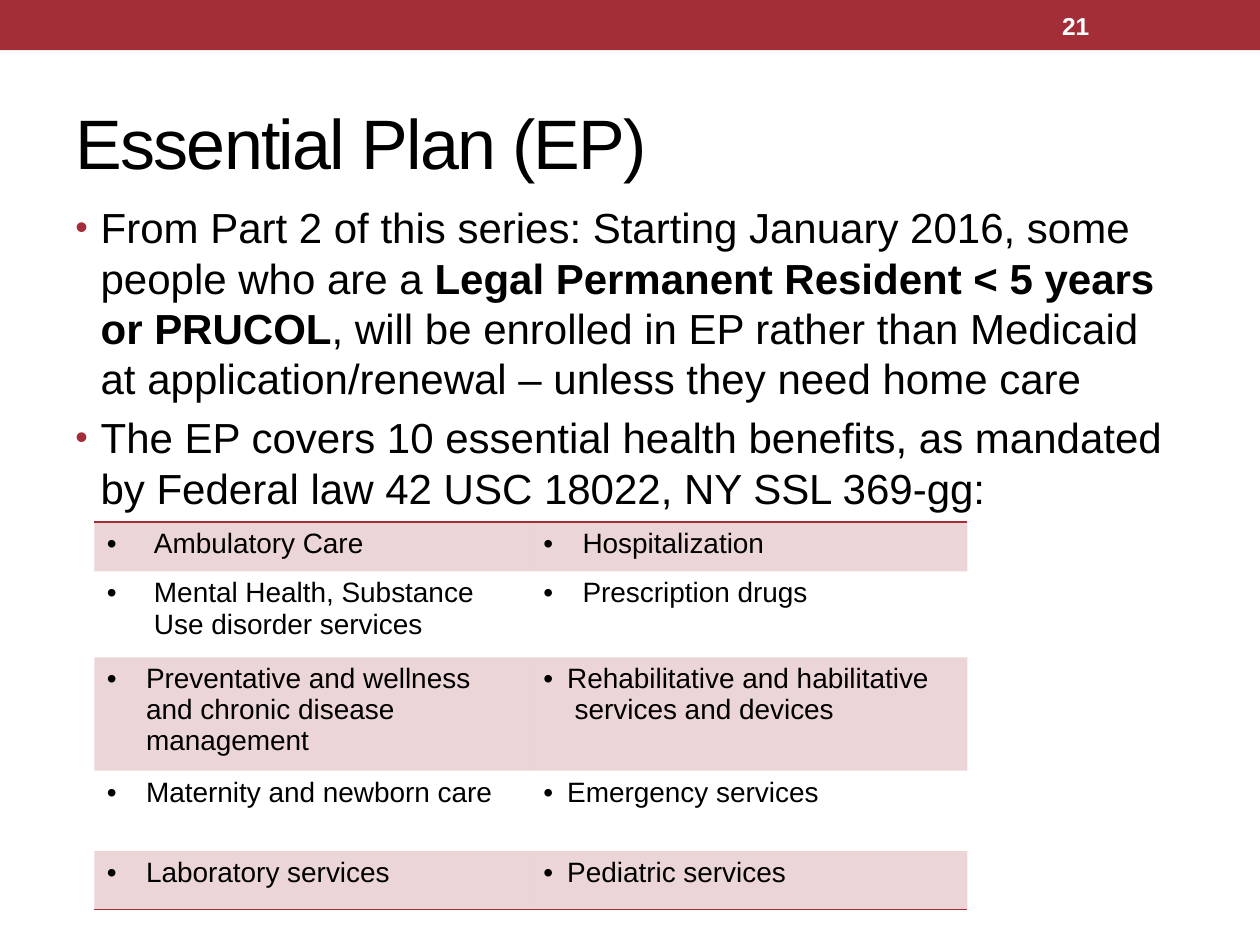
"""Build the Essential Plan slide: banner, title, bullets and benefits table."""
from lxml import etree
from pptx import Presentation
from pptx.dml.color import RGBColor
from pptx.enum import shapes, text
from pptx.oxml.ns import qn
from pptx.util import Cm, Pt

RED = RGBColor(0xA3, 0x2E, 0x37)
BLACK = RGBColor(0, 0, 0)
WHITE = RGBColor(0xFF, 0xFF, 0xFF)
NO_GRID_STYLE = "{2D5ABB26-0587-4C30-8999-92F81FD0307C}"


def add_run(p, words, size, color=BLACK, bold=False):
    r = p.add_run()
    r.text = words
    for name, value in {"name": "Arial", "size": Pt(size), "bold": bold}.items():
        setattr(r.font, name, value)
    r.font.color.rgb = color
    return r


def add_bullet(p, indent, color=None):
    pPr = p._p.get_or_add_pPr()
    pPr.set("marL", str(Cm(indent)))
    pPr.set("indent", str(-Cm(indent)))
    if color is not None:
        clr = etree.SubElement(pPr, qn("a:buClr"))
        etree.SubElement(clr, qn("a:srgbClr"), val=str(color))
        etree.SubElement(pPr, qn("a:buSzPct"), val="85000")
    etree.SubElement(pPr, qn("a:buFont"), typeface="Arial")
    etree.SubElement(pPr, qn("a:buChar"), char="•")


prs = Presentation()
prs.slide_width, prs.slide_height = Cm(25.4), Cm(19.05)
s = prs.slides.add_slide(prs.slide_layouts[5])

banner = s.shapes.add_shape(shapes.MSO_SHAPE.RECTANGLE, 0, 0, Cm(25.4), Cm(1.01))
banner.shadow.inherit = False
banner.fill.solid()
banner.fill.fore_color.rgb = RED
banner.line.fill.background()

title = s.shapes.title
for name, value in {"left": 1.27, "top": 1.49, "width": 22.86, "height": 2.74}.items():
    setattr(title, name, Cm(value))
tf = title.text_frame
tf.vertical_anchor = text.MSO_ANCHOR.MIDDLE
p = tf.paragraphs[0]
p.alignment = text.PP_ALIGN.LEFT
r = add_run(p, "Essential Plan (EP)", 40)
r.font._element.set("spc", "-100")

body = [
    [("From Part 2 of this series: Starting January 2016, some people who are a ", False),
     ("Legal Permanent Resident < 5 years or PRUCOL", True),
     (", will be enrolled in EP rather than Medicaid at application/renewal – "
      "unless they need home care", False)],
    [("The EP covers 10 essential health benefits, as mandated by Federal law "
      "42 USC 18022, NY SSL 369-gg:", False)],
]
tf = s.shapes.add_textbox(Cm(1.27), Cm(3.94), Cm(22.86), Cm(14.07)).text_frame
tf.word_wrap = True
for i, runs in enumerate(body):
    p = tf.add_paragraph() if i else tf.paragraphs[0]
    if i:
        p.space_before = Pt(4.8)
    add_bullet(p, 0.51, RED)
    for words, bold in runs:
        add_run(p, words, 24, bold=bold)

benefits = [
    (1.0, ("Ambulatory Care", 0.95), ("Hospitalization", 0.79)),
    (1.73, ("Mental Health, Substance Use disorder services", 0.95),
     ("Prescription drugs", 0.79)),
    (2.27, ("Preventative and wellness and chronic disease management", 0.79),
     ("Rehabilitative and habilitative", 0.48)),
    (1.62, ("Maternity and newborn care", 0.79), ("Emergency services", 0.48)),
    (1.18, ("Laboratory services", 0.79), ("Pediatric services", 0.48)),
]
table = s.shapes.add_table(5, 2, Cm(1.9), Cm(10.52), Cm(17.6), Cm(7.8)).table
table.first_row = table.horz_banding = False
table._tbl.tblPr.find(qn("a:tableStyleId")).text = NO_GRID_STYLE
edges = {0: "a:lnT", len(benefits) - 1: "a:lnB"}
for i, (height, *entries) in enumerate(benefits):
    table.rows[i].height = Cm(height)
    for j, (words, indent) in enumerate(entries):
        cell = table.cell(i, j)
        p = cell.text_frame.paragraphs[0]
        add_bullet(p, indent)
        add_run(p, words, 16)
        tcPr = cell._tc.get_or_add_tcPr()
        if i % 2:
            cell.fill.background()
        else:
            cell.fill.solid()
            cell.fill.fore_color.rgb = RED
            clr = tcPr.find(".//" + qn("a:srgbClr"))
            etree.SubElement(clr, qn("a:alpha"), val="20000")
        if i in edges:
            ln = etree.Element(qn(edges[i]), w=str(Pt(1)))
            fill = etree.SubElement(ln, qn("a:solidFill"))
            etree.SubElement(fill, qn("a:srgbClr"), val=str(RED))
            tcPr.insert(0, ln)

p = table.cell(2, 1).text_frame.add_paragraph()
p._p.get_or_add_pPr().set("marL", str(Cm(0.63)))
add_run(p, "services and devices", 16)

tf = s.shapes.add_textbox(Cm(21.16), Cm(0.06), Cm(2.97), Cm(0.91)).text_frame
tf.word_wrap = True
tf.vertical_anchor = text.MSO_ANCHOR.MIDDLE
add_run(tf.paragraphs[0], "21", 14, WHITE, True)

prs.save("out.pptx")
